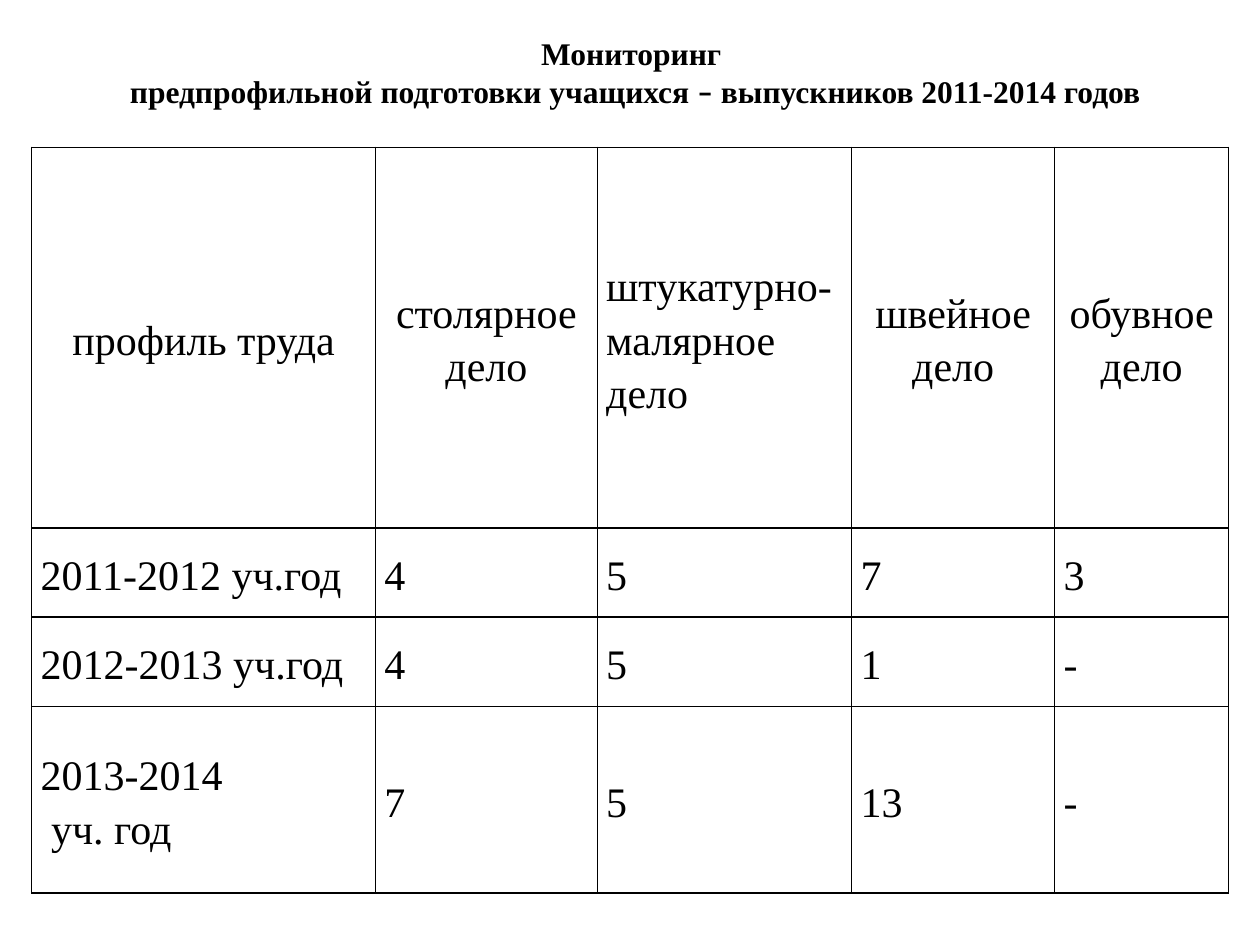
from dataclasses import dataclass

from lxml import etree
from pptx import Presentation
from pptx import util as u
from pptx.dml.color import RGBColor
from pptx.enum import text as t
from pptx.oxml import ns

SERIF = "Times New Roman"
BLACK = "000000"
COLS = (6.93, 4.47, 5.13, 4.09, 3.51)


@dataclass
class Row:
    height: float
    cells: tuple[str, ...]
    mid: tuple[int, ...] = ()  # columns with centred text


ROWS = (
    Row(7.67, ("профиль труда", "столярное дело", "штукатурно-малярное дело",
               "швейное дело", "обувное дело"), (0, 1, 3, 4)),
    Row(1.8, ("2011-2012 уч.год", "4", "5", "7", "3")),
    Row(1.8, ("2012-2013 уч.год", "4", "5", "1", "-")),
    Row(3.76, ("2013-2014\n уч. год", "7", "5", "13", "-")),
)


def color(code: str) -> RGBColor:
    return RGBColor.from_string(code)


def style(para, size: float, bold: bool, mid: bool) -> None:
    para.alignment = t.PP_ALIGN.CENTER if mid else t.PP_ALIGN.LEFT
    font = para.font
    font.name, font.size, font.bold = SERIF, u.Pt(size), bold
    font.color.rgb = color(BLACK)


def border(cell, width: float = 1) -> None:
    props = cell._tc.get_or_add_tcPr()
    for side in ("a:lnL", "a:lnR", "a:lnT", "a:lnB"):
        line = etree.SubElement(props, ns.qn(side), w=str(u.Pt(width)))
        fill = etree.SubElement(line, ns.qn("a:solidFill"))
        etree.SubElement(fill, ns.qn("a:srgbClr"), val=BLACK)


def fill_cell(cell, words: str, mid: bool) -> None:
    border(cell)
    cell.fill.background()
    cell.vertical_anchor = t.MSO_ANCHOR.MIDDLE
    cell.margin_left = cell.margin_right = u.Cm(0.18)
    cell.margin_top = cell.margin_bottom = 0
    cell.text = words
    for para in cell.text_frame.paragraphs:
        para.line_spacing = 1.15
        style(para, 24, False, mid)


def add_title(slide) -> None:
    box = slide.shapes.add_textbox(u.Cm(2.11), u.Cm(0.51), u.Cm(21.39), u.Cm(2.57))
    frame = box.text_frame
    frame.word_wrap = True
    frame.vertical_anchor = t.MSO_ANCHOR.TOP
    frame.margin_top = u.Cm(0.18)
    frame.text = "Мониторинг \n"
    first, second = frame.paragraphs
    for para in (first, second):
        style(para, 18, True, True)
    for words, face in (("предпрофильной подготовки учащихся ", SERIF),
                        ("–", "Calibri"),
                        (" выпускников 2011-2014 годов", SERIF)):
        run = second.add_run()
        run.text = words
        run.font.name = face


def add_grid(slide) -> None:
    frame = slide.shapes.add_table(
        len(ROWS), len(COLS), u.Cm(0.64), u.Cm(2.97),
        u.Cm(sum(COLS)), u.Cm(sum(row.height for row in ROWS)))
    table = frame.table
    table.first_row = table.horz_banding = False
    for col, width in zip(table.columns, COLS):
        col.width = u.Cm(width)
    for r, row in enumerate(ROWS):
        table.rows[r].height = u.Cm(row.height)
        for c, words in enumerate(row.cells):
            fill_cell(table.cell(r, c), words, c in row.mid)


def main() -> None:
    deck = Presentation()
    deck.slide_width, deck.slide_height = u.Cm(25.4), u.Cm(19.05)
    slide = deck.slides.add_slide(deck.slide_layouts[6])
    # Table of pupils by trade and year
    add_grid(slide)
    # Heading
    add_title(slide)
    deck.save("out.pptx")


if __name__ == "__main__":
    main()
